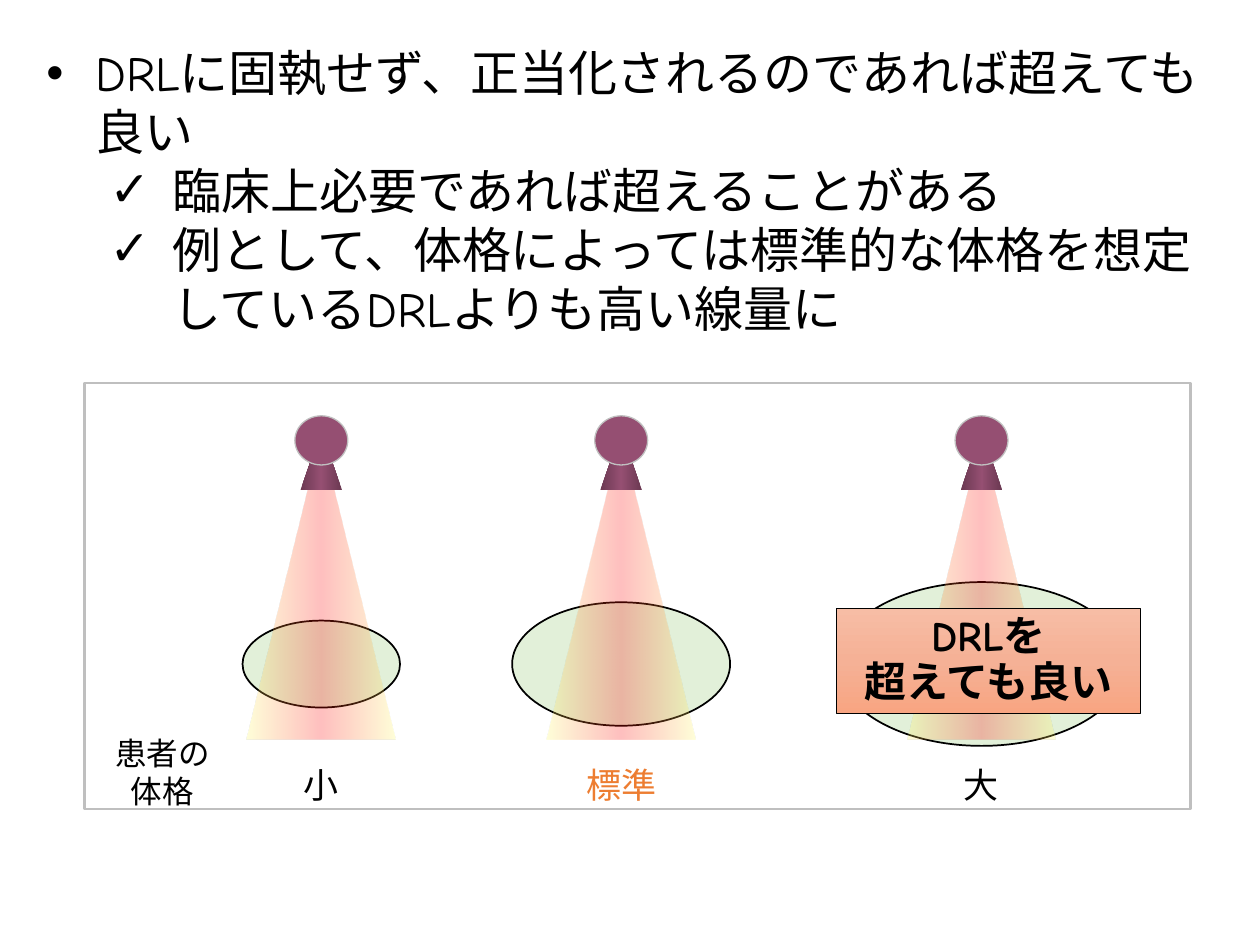
from lxml.etree import SubElement
from pptx import Presentation
from pptx.dml.color import RGBColor
from pptx.enum.lang import MSO_LANGUAGE_ID
from pptx.enum.shapes import MSO_SHAPE
from pptx.enum.text import MSO_ANCHOR, PP_ALIGN
from pptx.oxml.ns import qn
from pptx.util import Inches, Pt

FONT = "Comic Neue"
BEAM = [(0, "FFFF66"), (50, "FF0000"), (100, "FFFF66")]
CONE = [(0, "6B3952"), (50, "954F72"), (100, "6B3952")]
CALLOUT = [(0, "F7BDA5"), (50, "F5B196"), (100, "F8A582")]


def color(value):
    """Turn a hex string into a colour."""
    return RGBColor.from_string(value)


def set_gradient(shape, stops, angle, opacity=100):
    """Fill a shape with a linear gradient of (percent, hex) stops."""
    shape.fill.gradient()
    shape.fill.gradient_angle = angle
    stop_list = next(shape._element.iter(qn("a:gsLst")))
    for stop in list(stop_list):
        stop_list.remove(stop)
    for position, value in stops:
        stop = SubElement(stop_list, qn("a:gs"), pos=str(position * 1000))
        tint = SubElement(stop, qn("a:srgbClr"), val=value)
        if opacity < 100:
            SubElement(tint, qn("a:alpha"), val=str(opacity * 1000))


def add_figure(slide, kind, box, fill=None, line=None, width=1):
    """Add a preset shape with a plain fill and outline, or none."""
    shape = slide.shapes.add_shape(kind, *(Inches(length) for length in box))
    shape.shadow.inherit = False
    if fill:
        shape.fill.solid()
        shape.fill.fore_color.rgb = color(fill)
    else:
        shape.fill.background()
    if line:
        shape.line.color.rgb = color(line)
        shape.line.width = Pt(width)
    else:
        shape.line.fill.background()
    return shape


def format_text(paragraph, size, value="000000", bold=False):
    """Format every run of a paragraph."""
    for run in paragraph.runs:
        run.font.size = Pt(size)
        run.font.bold = bold
        run.font.name = FONT
        run.font.color.rgb = color(value)
        run.font.language_id = MSO_LANGUAGE_ID.JAPANESE
        SubElement(run.font._element, qn("a:ea"), typeface=FONT)


def add_label(slide, box, text, size, value="000000"):
    """Add a centred label that does not wrap."""
    label = slide.shapes.add_textbox(*(Inches(length) for length in box))
    label.text_frame.word_wrap = False
    label.text_frame.text = text
    for paragraph in label.text_frame.paragraphs:
        paragraph.alignment = PP_ALIGN.CENTER
        format_text(paragraph, size, value)


def add_bullets(slide, box, items):
    """Add a bulleted list of (level, text) items."""
    frame = slide.shapes.add_textbox(*(Inches(length) for length in box)).text_frame
    frame.word_wrap = True
    styles = [("•", 0.39, 0.39), ("✓", 1, 0.5)]
    for index, (level, text) in enumerate(items):
        paragraph = frame.paragraphs[0] if index == 0 else frame.add_paragraph()
        paragraph.text = text
        paragraph.level = level
        bullet, margin, hanging = styles[level]
        properties = paragraph._p.get_or_add_pPr()
        properties.set("marL", str(Inches(margin)))
        properties.set("indent", str(-Inches(hanging)))
        SubElement(properties, qn("a:buFont"), typeface="Arial")
        SubElement(properties, qn("a:buChar"), char=bullet)
        format_text(paragraph, 28)


def add_exposure(slide, center, top, body_size, name, value):
    """Draw a tube, its beam and a patient's body around a centre line."""
    width, height = body_size
    body = (center - width / 2, top + 1.97 - height / 2, width, height)
    add_figure(slide, MSO_SHAPE.OVAL, body, "E2F0D9", "000000")
    beam = add_figure(slide, MSO_SHAPE.FLOWCHART_EXTRACT,
                      (center - 0.59, top + 0.16, 1.18, 2.41))
    set_gradient(beam, BEAM, 0, 25)
    cone = add_figure(slide, MSO_SHAPE.ISOSCELES_TRIANGLE,
                      (center - 0.165, top + 0.12, 0.33, 0.47))
    set_gradient(cone, CONE, 0)
    add_figure(slide, MSO_SHAPE.OVAL, (center - 0.21, top, 0.42, 0.39),
               "954F72", "C0C0C0", 0.75)
    add_label(slide, (center - 0.38, top + 2.71, 0.76, 0.44), name, 20, value)


def add_diagram(slide, box):
    """Draw the framed comparison of three body sizes."""
    left, top = box[:2]
    exposures = [
        (1.88, (1.25, 0.69), "小", "000000"),
        (4.26, (1.73, 0.98), "標準", "ED7D31"),
        (7.12, (2.29, 1.3), "大", "000000"),
    ]
    for offset, body_size, name, value in exposures:
        add_exposure(slide, left + offset, top + 0.26, body_size, name, value)
    add_label(slide, (left + 0.14, top + 2.74, 0.96, 0.71), "患者の\n体格", 18)
    add_figure(slide, MSO_SHAPE.RECTANGLE, box, line="BFBFBF", width=1.5)


def add_callout(slide, box, text):
    """Add the bold message over the diagram."""
    callout = add_figure(slide, MSO_SHAPE.RECTANGLE, box, line="000000", width=0.5)
    set_gradient(callout, CALLOUT, 270)
    frame = callout.text_frame
    frame.word_wrap = True
    frame.vertical_anchor = MSO_ANCHOR.MIDDLE
    frame.text = text
    for paragraph in frame.paragraphs:
        paragraph.alignment = PP_ALIGN.CENTER
        paragraph.line_spacing = 0.9
        format_text(paragraph, 24, bold=True)


def main():
    """Build and save the slide."""
    presentation = Presentation()
    presentation.slide_width = Inches(10)
    presentation.slide_height = Inches(7.5)
    slide = presentation.slides.add_slide(presentation.slide_layouts[6])
    add_bullets(slide, (0.27, 0.29, 9.58, 2.93), [
        (0, "DRLに固執せず、正当化されるのであれば超えても良い"),
        (1, "臨床上必要であれば超えることがある"),
        (1, "例として、体格によっては標準的な体格を想定しているDRLよりも高い線量に"),
    ])
    add_diagram(slide, (0.67, 3.04, 8.78, 3.38))
    add_callout(slide, (6.64, 4.83, 2.41, 0.83), "DRLを\n超えても良い")
    presentation.save("out.pptx")


if __name__ == "__main__":
    main()
